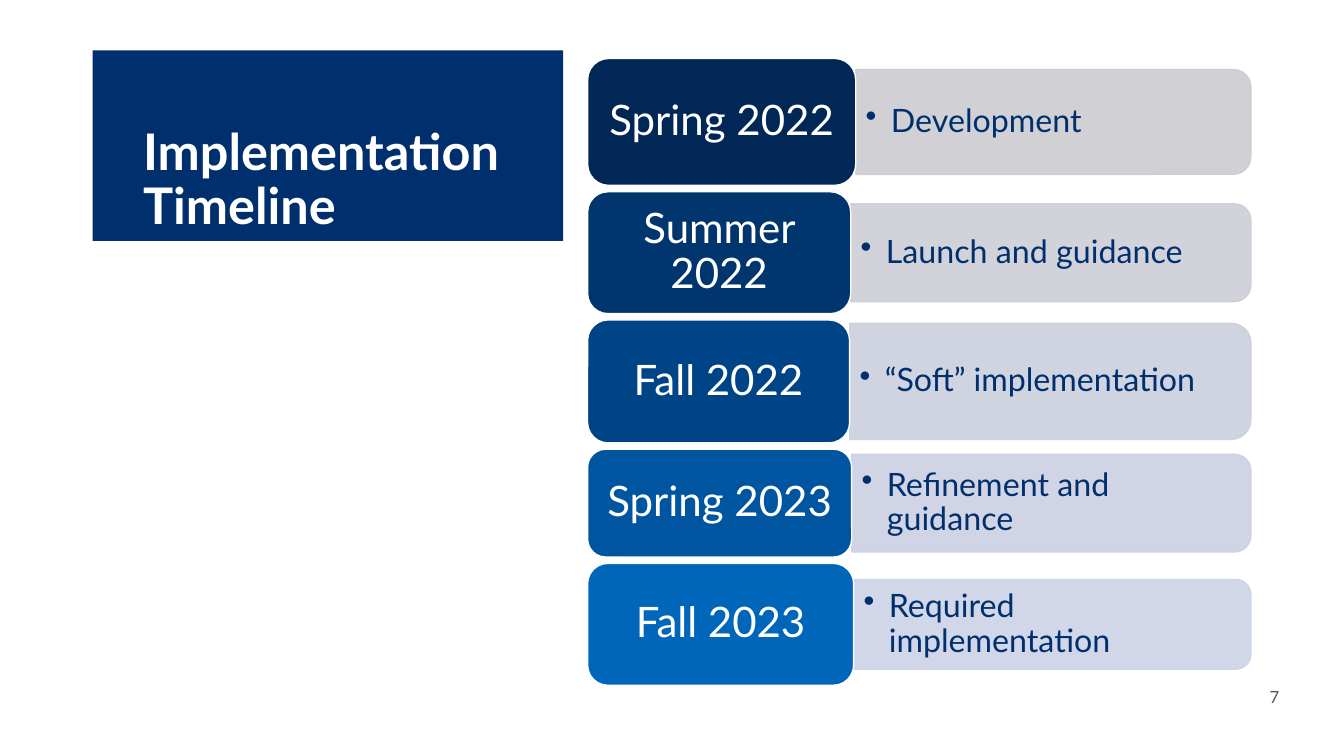
from dataclasses import dataclass

from lxml.etree import SubElement
from pptx import Presentation
from pptx.dml.color import RGBColor
from pptx.enum.shapes import MSO_SHAPE as Preset
from pptx.enum.text import MSO_ANCHOR as Anchor
from pptx.enum.text import MSO_AUTO_SIZE as AutoSize
from pptx.enum.text import PP_ALIGN as Align
from pptx.oxml.ns import qn
from pptx.shapes.autoshape import Shape
from pptx.slide import Slide
from pptx.text.text import TextFrame
from pptx.util import Inches, Length, Pt

SLIDE_W, SLIDE_H = Inches(13.33), Inches(7.5)
FONT = "Lato"
NAVY = RGBColor(0x00, 0x2F, 0x6D)
WHITE = RGBColor(0xFF, 0xFF, 0xFF)
GREY = RGBColor(0x53, 0x57, 0x5A)


def across(percent: float) -> Length:
    """Share of the slide's width."""
    return Length(round(SLIDE_W * percent / 100))


def down(percent: float) -> Length:
    """Share of the slide's height."""
    return Length(round(SLIDE_H * percent / 100))


CARDS_LEFT, CARDS_TOP = across(43.72), down(7.73)
CARD_GAP = down(0.83)
PANELS_RIGHT = across(93.07)
PANEL_OPACITY = 90


@dataclass(frozen=True)
class Phase:
    """Sizes are percentages of the slide's width or height."""
    period: str
    activity: str
    card_width: float
    card_height: float
    panel_height: float
    card_color: RGBColor
    panel_color: RGBColor


PHASES = [
    Phase("Spring 2022", "Development", 19.95, 16.8, 13.87,
          RGBColor(0x00, 0x27, 0x55), RGBColor(0xCC, 0xCD, 0xD1)),
    Phase("Summer 2022", "Launch and guidance", 19.58, 16.13, 12.93,
          RGBColor(0x00, 0x35, 0x6E), RGBColor(0xCC, 0xCE, 0xD7)),
    Phase("Fall 2022", "“Soft” implementation", 19.5, 16.27, 15.33,
          RGBColor(0x00, 0x44, 0x88), RGBColor(0xCB, 0xCF, 0xDD)),
    Phase("Spring 2023", "Refinement and guidance", 19.65, 14.27, 12.93,
          RGBColor(0x00, 0x55, 0xA1), RGBColor(0xCC, 0xD0, 0xE2)),
    Phase("Fall 2023", "Required implementation", 19.8, 16.13, 11.87,
          RGBColor(0x00, 0x66, 0xBA), RGBColor(0xCC, 0xD2, 0xE7)),
]


def write(frame: TextFrame, text: str, size: float, color: RGBColor,
          align: Align, anchor: Anchor, bold: bool = False,
          bulleted: bool = False) -> None:
    frame.word_wrap = True
    frame.auto_size = AutoSize.NONE
    frame.vertical_anchor = anchor
    frame.text = text
    paragraph = frame.paragraphs[0]
    paragraph.alignment = align
    paragraph.line_spacing = 0.9
    if bulleted:
        properties = paragraph._p.get_or_add_pPr()
        properties.set("marL", str(Inches(0.25)))
        properties.set("indent", str(-Inches(0.25)))
        SubElement(properties, qn("a:buChar")).set("char", "•")
    font = paragraph.font
    font.name, font.size, font.bold = FONT, Pt(size), bold
    font.color.rgb = color


def set_insets(frame: TextFrame, left: float, top: float,
               right: float, bottom: float) -> None:
    frame.margin_left, frame.margin_top = Inches(left), Inches(top)
    frame.margin_right, frame.margin_bottom = Inches(right), Inches(bottom)


def paint(shape: Shape, fill: RGBColor, line: RGBColor) -> None:
    shape.shadow.inherit = False
    shape.fill.solid()
    shape.fill.fore_color.rgb = fill
    shape.line.color.rgb = line
    shape.line.width = Pt(1)


def add_title(slide: Slide) -> None:
    title = slide.shapes.title
    title.left, title.top = across(6.9), down(6.67)
    title.width, title.height = across(35), down(25.2)
    title.fill.solid()
    title.fill.fore_color.rgb = NAVY
    set_insets(title.text_frame, 0.5, 0.5, 0.5, 0.05)
    write(title.text_frame, "Implementation\vTimeline", 36, WHITE,
          Align.LEFT, Anchor.BOTTOM, bold=True)


def add_panel(slide: Slide, phase: Phase, left: Length, middle: Length) -> None:
    """Draw the activity panel from left to the shared right edge."""
    width, height = PANELS_RIGHT - left, down(phase.panel_height)
    center = left + width // 2
    # Turned a quarter, so the rounded top corners face right.
    panel = slide.shapes.add_shape(
        Preset.ROUND_2_SAME_RECTANGLE,
        center - height // 2, middle - width // 2, height, width)
    panel.rotation = 90
    paint(panel, phase.panel_color, phase.panel_color)
    for color in panel._element.spPr.iter(qn("a:srgbClr")):
        SubElement(color, qn("a:alpha")).set("val", str(PANEL_OPACITY * 1000))

    activity = slide.shapes.add_textbox(
        left, middle - height // 2, width - Inches(0.05), height)
    set_insets(activity.text_frame, 0.1, 0.05, 0.1, 0.05)
    write(activity.text_frame, phase.activity, 23, NAVY,
          Align.LEFT, Anchor.MIDDLE, bulleted=True)


def add_timeline(slide: Slide) -> None:
    top = CARDS_TOP
    for phase in PHASES:
        width, height = across(phase.card_width), down(phase.card_height)
        add_panel(slide, phase, CARDS_LEFT + width, top + height // 2)
        card = slide.shapes.add_shape(
            Preset.ROUNDED_RECTANGLE, CARDS_LEFT, top, width, height)
        paint(card, phase.card_color, WHITE)
        set_insets(card.text_frame, 0.12, 0.06, 0.12, 0.06)
        write(card.text_frame, phase.period, 30, WHITE,
              Align.CENTER, Anchor.MIDDLE)
        top += height + CARD_GAP


def add_page_number(slide: Slide) -> None:
    number = slide.shapes.add_textbox(
        across(92.93), down(89.73), across(3), down(5.33))
    number.fill.solid()
    number.fill.fore_color.rgb = WHITE
    write(number.text_frame, "7", 12, GREY, Align.RIGHT, Anchor.MIDDLE)


def main() -> None:
    deck = Presentation()
    deck.slide_width, deck.slide_height = SLIDE_W, SLIDE_H
    slide = deck.slides.add_slide(deck.slide_layouts[5])
    add_title(slide)
    add_timeline(slide)
    add_page_number(slide)
    deck.save("out.pptx")


if __name__ == "__main__":
    main()
